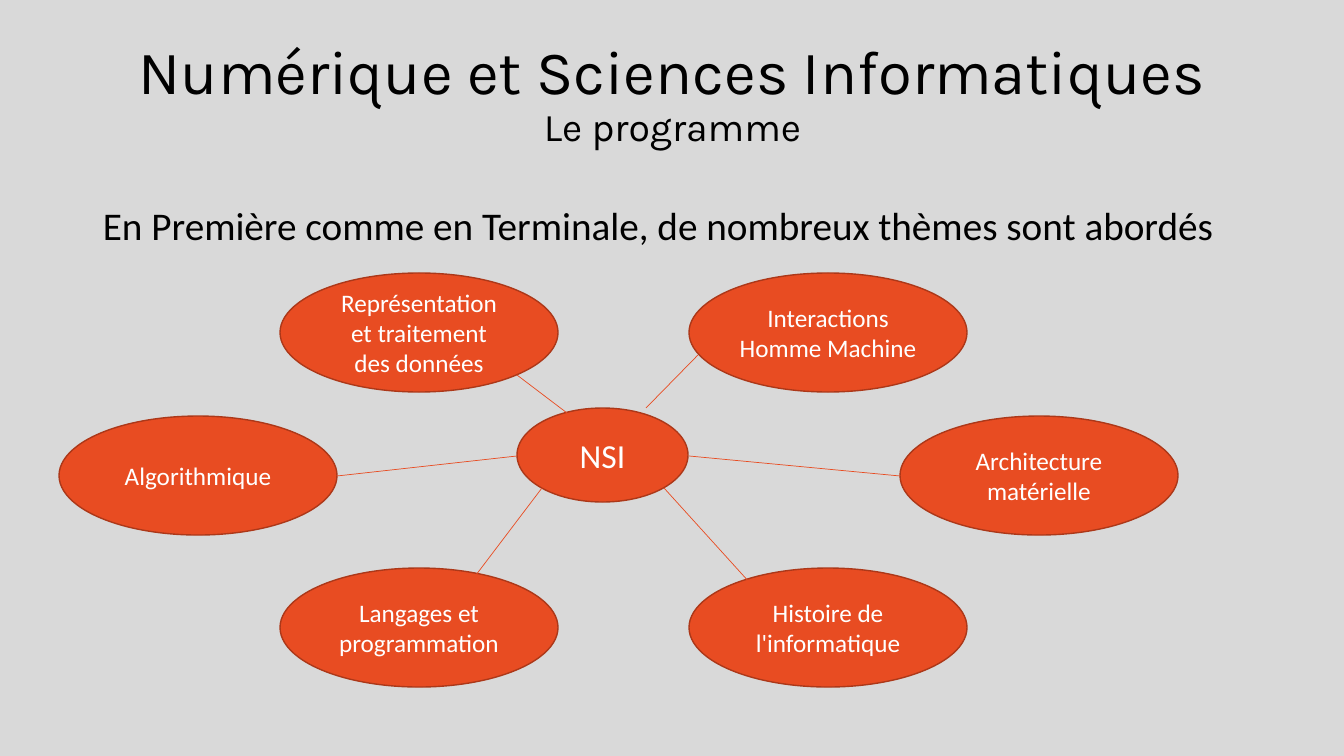
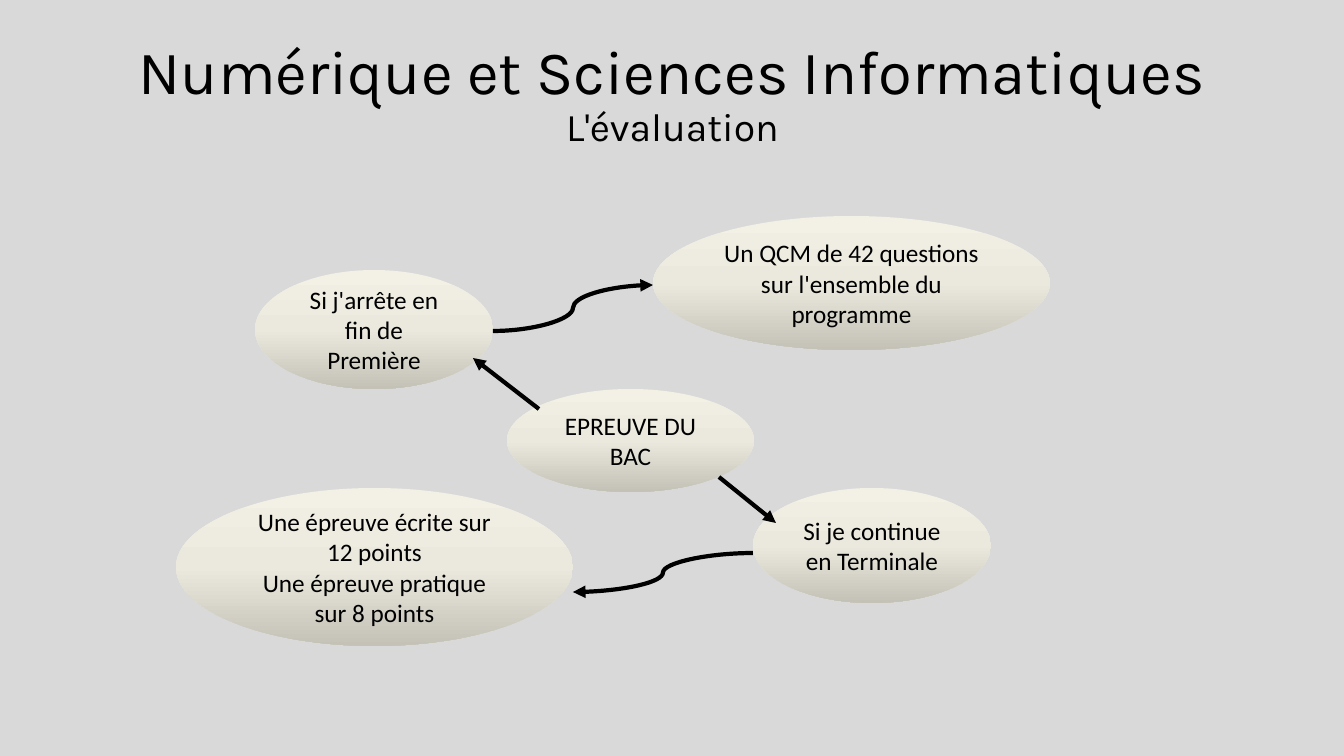
import copy

import pptx
import pptx.dml.color
import pptx.enum.shapes
import pptx.enum.text
import pptx.oxml.ns
import pptx.oxml.xmlchemy
import pptx.util
from lxml import etree

# Shared style
PX = 914400 / 100.8
SLIDE_SIZE = (1344, 756)
TITLE_BOX = (93, 23, 1159, 146)
TITLE = "Numérique et Sciences Informatiques"
TITLE_FONT, BODY_FONT = "Karla", "Calibri"
BACKGROUND, BLACK, WHITE = "D9D9D9", "000000", "FFFFFF"
ORANGE, DARK_ORANGE = "E84C22", "AC3819"
IVORY_STOPS = [(0, "F3F1E5"), (0.5, "EBE9DE"), (1, "C4C2B7")]

# Slide 1: topics around a hub
INTRO = "En Première comme en Terminale, de nombreux thèmes sont abordés"
INTRO_BOX = (93, 202, 1159, 408)
HUB = ("NSI", (517, 408, 171, 94))
TOPIC_SIZE = (278, 119)
TOPICS = [
    ("Représentation et traitement des données", (280, 273)),
    ("Interactions Homme Machine", (689, 273)),
    ("Architecture matérielle", (900, 416)),
    ("Histoire de l'informatique", (689, 568)),
    ("Langages et programmation", (280, 568)),
    ("Algorithmique", (59, 416)),
]
SPOKES = [
    (689, 456, 900, 476),
    (517, 456, 337, 476),
    (542, 488, 473, 579),
    (664, 488, 760, 594),
    (571, 416, 517, 375),
    (646, 408, 698, 355),
]

# Slide 2: exam paths
EXAM_STEPS = [
    (["EPREUVE DU BAC"], (507, 389, 247, 103)),
    (["Si j'arrête en fin de Première"], (255, 270, 238, 119)),
    (["Un QCM de 42 questions sur l'ensemble du programme"], (653, 216, 397, 134)),
    (["Si je continue en Terminale"], (753, 488, 238, 115)),
    (["Une épreuve écrite sur 12 points", "Une épreuve pratique sur 8 points"],
     (176, 488, 397, 158)),
]
EXAM_ARROWS = [
    ("CURVE", (493, 331, 653, 285)),
    ("CURVE", (753, 553, 573, 592)),
    ("STRAIGHT", (539, 409, 473, 358)),
    ("STRAIGHT", (719, 477, 776, 523)),
]


def emu(*lengths):
    return [pptx.util.Emu(round(length * PX)) for length in lengths]


def rgb(value):
    return pptx.dml.color.RGBColor.from_string(value)


def write(frame, paragraphs, size=18, font=BODY_FONT, color=BLACK, align="CENTER",
          anchor="MIDDLE", spacing=None, before=None):
    """Fill a frame; each paragraph is a string or a list of (line, size)."""
    frame.word_wrap = True
    frame.auto_size = pptx.enum.text.MSO_AUTO_SIZE.NONE
    frame.vertical_anchor = getattr(pptx.enum.text.MSO_ANCHOR, anchor)
    for index, lines in enumerate(paragraphs):
        para = frame.add_paragraph() if index else frame.paragraphs[0]
        para.alignment = getattr(pptx.enum.text.PP_ALIGN, align)
        if spacing:
            para.line_spacing = spacing
        if before:
            para.space_before = pptx.util.Pt(before)
        if isinstance(lines, str):
            lines = [(lines, size)]
        for number, (text, points) in enumerate(lines):
            if number:
                para.add_line_break()
            span = para.add_run()
            span.text = text
            span.font.name = font
            span.font.size = pptx.util.Pt(points)
            span.font.color.rgb = rgb(color)


def add_page(deck, subtitle):
    page = deck.slides.add_slide(deck.slide_layouts[5])
    title = page.shapes.title
    title.left, title.top, title.width, title.height = emu(*TITLE_BOX)
    write(title.text_frame, [[(TITLE, 44), (subtitle, 28)]], font=TITLE_FONT, spacing=0.9)
    return page


def add_ellipse(page, box, paragraphs, **text_format):
    oval = page.shapes.add_shape(pptx.enum.shapes.MSO_SHAPE.OVAL, *emu(*box))
    oval.shadow.inherit = False
    write(oval.text_frame, paragraphs, **text_format)
    return oval


def add_orange_ellipse(page, box, text, size=18):
    oval = add_ellipse(page, box, [text], size=size, color=WHITE)
    oval.fill.solid()
    oval.fill.fore_color.rgb = rgb(ORANGE)
    oval.line.color.rgb = rgb(DARK_ORANGE)
    oval.line.width = pptx.util.Pt(1)


def add_ivory_ellipse(page, box, paragraphs):
    oval = add_ellipse(page, box, paragraphs)
    oval.line.fill.background()
    oval.fill.gradient()
    oval.fill.gradient_angle = 270
    # The default gradient has two stops; a third is needed
    stop_list = oval.element.spPr.find(".//" + pptx.oxml.ns.qn("a:gsLst"))
    stop_list.append(copy.deepcopy(stop_list[0]))
    for stop, (position, color) in zip(oval.fill.gradient_stops, IVORY_STOPS):
        stop.position = position
        stop.color.rgb = rgb(color)


def add_link(page, ends, color, width, kind="STRAIGHT", arrow=False):
    connector_type = getattr(pptx.enum.shapes.MSO_CONNECTOR, kind)
    link = page.shapes.add_connector(connector_type, *emu(*ends))
    link.line.color.rgb = rgb(color)
    link.line.width = pptx.util.Pt(width)
    properties = link.element.spPr
    if arrow:
        outline = properties.find(pptx.oxml.ns.qn("a:ln"))
        etree.SubElement(outline, pptx.oxml.ns.qn("a:tailEnd"), type="triangle")
    etree.SubElement(properties, pptx.oxml.ns.qn("a:effectLst"))


def build_programme(deck):
    page = add_page(deck, "Le programme")
    intro = page.shapes.add_textbox(*emu(*INTRO_BOX))
    write(intro.text_frame, [INTRO], size=28, align="LEFT", anchor="TOP",
          spacing=0.9, before=10)
    hub_text, hub_box = HUB
    add_orange_ellipse(page, hub_box, hub_text, size=24)
    for text, corner in TOPICS:
        add_orange_ellipse(page, corner + TOPIC_SIZE, text)
    for ends in SPOKES:
        add_link(page, ends, ORANGE, 0.5)


def build_evaluation(deck):
    page = add_page(deck, "L'évaluation")
    for paragraphs, box in EXAM_STEPS:
        add_ivory_ellipse(page, box, paragraphs)
    for kind, ends in EXAM_ARROWS:
        add_link(page, ends, BLACK, 3, kind=kind, arrow=True)


def main():
    deck = pptx.Presentation()
    deck.slide_width, deck.slide_height = emu(*SLIDE_SIZE)
    backdrop = deck.slide_master.background.fill
    backdrop.solid()
    backdrop.fore_color.rgb = rgb(BACKGROUND)
    build_programme(deck)
    build_evaluation(deck)
    deck.save("out.pptx")


if __name__ == "__main__":
    main()
